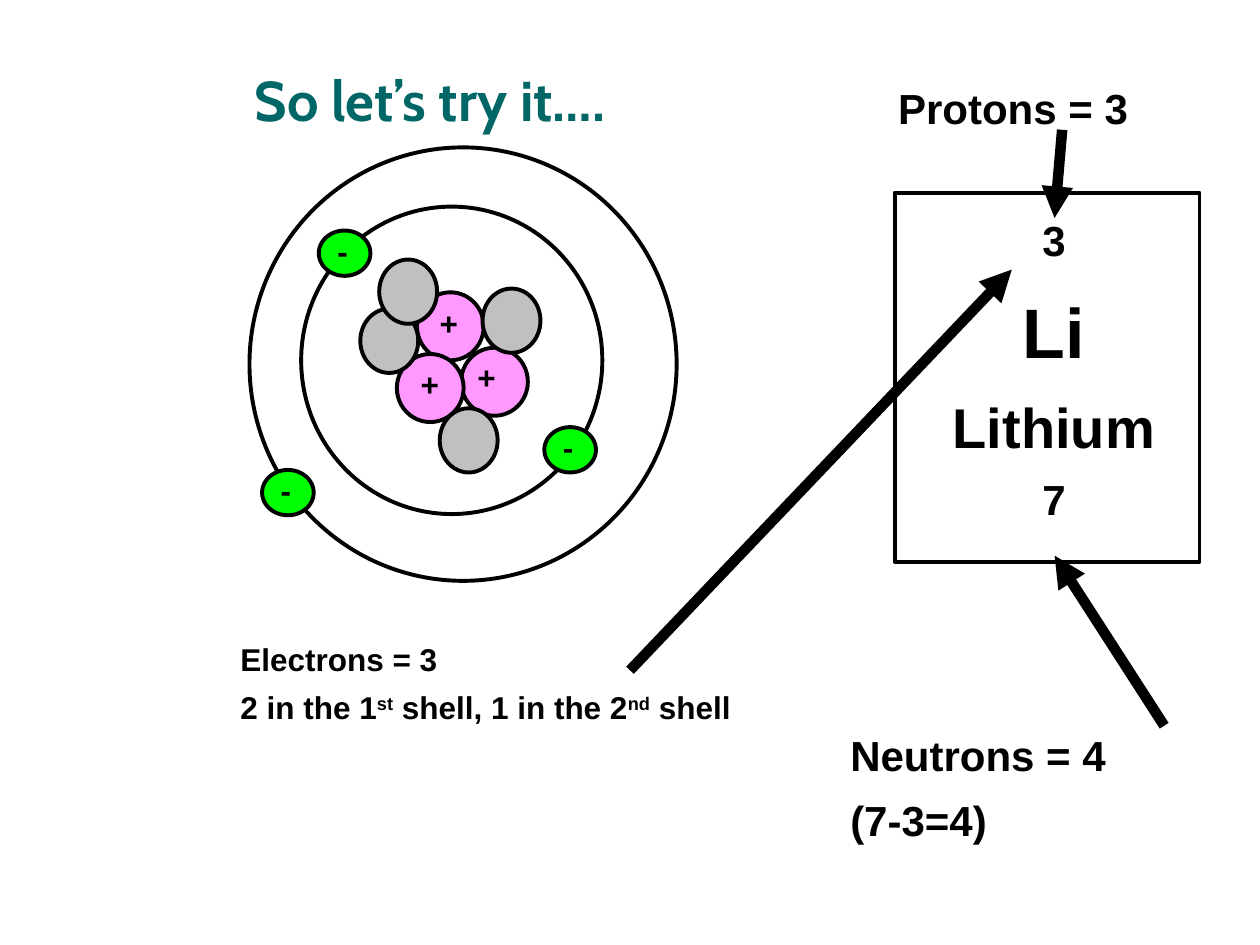
from lxml import etree
from pptx import Presentation
from pptx.dml.color import RGBColor
from pptx.enum.shapes import MSO_CONNECTOR, MSO_SHAPE
from pptx.enum.text import MSO_ANCHOR, PP_ALIGN
from pptx.oxml.ns import qn
from pptx.util import Pt

RECT, OVAL = MSO_SHAPE.RECTANGLE, MSO_SHAPE.OVAL
LEFT, MID = PP_ALIGN.LEFT, PP_ALIGN.CENTER
PX = 9144  # 100 px to the inch
COLORS = {"title": "006666", "ink": "000000", "proton": "FF99FF",
          "neutron": "C0C0C0", "electron": "00FF00"}
HUES = {name: RGBColor.from_string(code) for name, code in COLORS.items()}

deck = Presentation()
deck.slide_width, deck.slide_height = 1000 * PX, 750 * PX
slide = deck.slides.add_slide(deck.slide_layouts[5])
shapes = slide.shapes


def add_form(kind, x, y, w, h, fill=None):
    form = shapes.add_shape(kind, x * PX, y * PX, w * PX, h * PX)
    form.shadow.inherit = False
    if fill:
        form.fill.solid()
        form.fill.fore_color.rgb = HUES[fill]
    else:
        form.fill.background()
    form.line.color.rgb = HUES["ink"]
    form.line.width = Pt(2.25)


def add_text(x, y, w, h, lines, align=LEFT):
    """Lines are (text, size) pairs; text between carets is raised."""
    frame = shapes.add_textbox(x * PX, y * PX, w * PX, h * PX).text_frame
    frame.word_wrap = True
    for i, (words, size) in enumerate(lines):
        para = frame.add_paragraph() if i else frame.paragraphs[0]
        para.alignment = align
        para.line_spacing = 0.8
        para.space_before = Pt(round(size * 0.58)) if i else Pt(0)
        for j, part in enumerate(words.split("^")):
            run = para.add_run()
            run.text = part
            font = run.font
            font.name, font.size, font.bold = "Arial", Pt(size), True
            font.color.rgb = HUES["ink"]
            if j % 2:
                run._r.get_or_add_rPr().set("baseline", "30000")


# Title
title = shapes.title
title.left, title.top, title.width, title.height = 192 * PX, 33 * PX, 767 * PX, 92 * PX
title.text_frame.text = "So let’s try it…."
title.text_frame.vertical_anchor = MSO_ANCHOR.MIDDLE
para = title.text_frame.paragraphs[0]
para.alignment = LEFT
font = para.runs[0].font
font.name, font.size, font.bold = "Cabin", Pt(32), True
font.color.rgb = HUES["title"]

# Element card
add_form(RECT, 710, 153, 242, 293)
add_text(727, 173, 219, 250,
         [("3", 24), ("Li", 40), ("Lithium", 32), ("7", 24)], MID)

# Nucleus: each proton with the place of its sign
for x, y, left, top in [(331, 232, 339, 242), (366, 276, 369, 285),
                        (315, 281, 324, 291)]:
    add_form(OVAL, x, y, 53, 54, "proton")
    add_text(left, top, 57, 34, [("+", 18)])
for x, y in [(286, 245), (383, 229), (301, 206), (349, 324)]:
    add_form(OVAL, x, y, 46, 51, "neutron")

# Shells and electrons
add_form(OVAL, 239, 164, 239, 244)
add_form(OVAL, 198, 117, 339, 344)
for x, y in [(432, 339), (253, 183), (208, 373)]:
    add_form(OVAL, x, y, 41, 36, "electron")
    add_text(x + 5, y + 2, 34, 34, [("-", 18)])

# Counts
add_text(703, 68, 221, 42, [("Protons = 3", 24)])
add_text(665, 582, 287, 94, [("Neutrons = 4", 24), ("(7-3=4)", 24)])
add_text(181, 509, 449, 73, [
    ("Electrons = 3", 18),
    ("2 in the 1^st^ shell, 1 in the 2^nd^ shell", 18)])

# Arrows from the counts to the card
for ends in [(843, 103, 837, 173), (924, 576, 837, 441), (500, 532, 803, 214)]:
    arrow = shapes.add_connector(MSO_CONNECTOR.STRAIGHT, *[n * PX for n in ends])
    arrow.line.color.rgb = HUES["ink"]
    arrow.line.width = Pt(6)
    etree.SubElement(arrow.line._get_or_add_ln(), qn("a:tailEnd"), type="triangle")
    etree.SubElement(arrow._element.spPr, qn("a:effectLst"))

deck.save("out.pptx")
